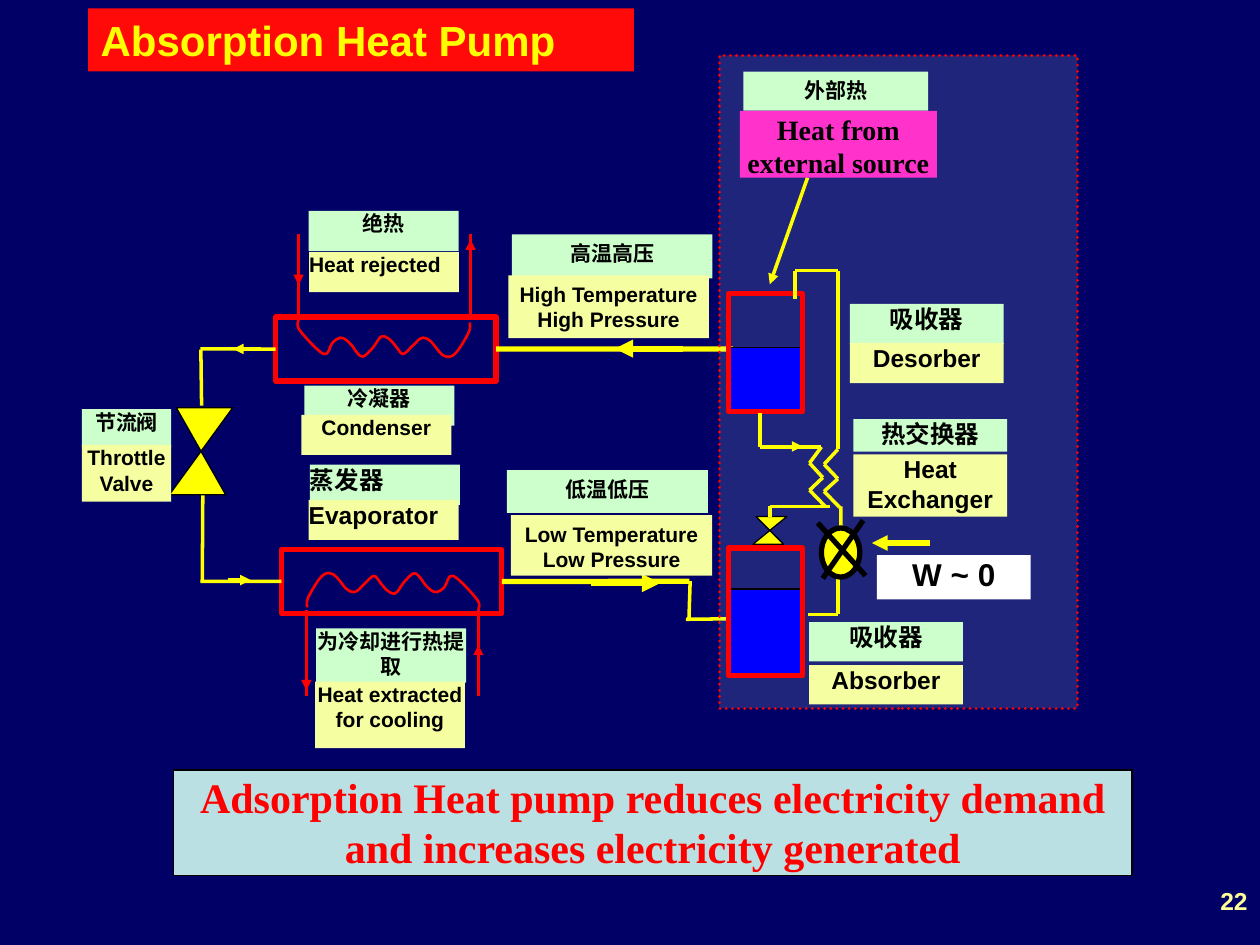
from dataclasses import dataclass
from itertools import pairwise

from lxml.etree import SubElement
from pptx import Presentation
from pptx.dml.color import RGBColor
from pptx.enum.dml import MSO_LINE
from pptx.enum.shapes import MSO_CONNECTOR, MSO_SHAPE
from pptx.enum.text import MSO_ANCHOR, PP_ALIGN
from pptx.oxml.ns import qn
from pptx.util import Pt


@dataclass(frozen=True)
class Theme:
    night: str = "000066"
    yellow: str = "FFFF00"
    red: str = "FF0000"
    title_red: str = "FF0909"
    ice: str = "BBE0E3"
    mint: str = "CCFFCC"
    cream: str = "F5FEA0"
    pink: str = "FF33CC"
    liquid: str = "0000FF"
    black: str = "000000"
    white: str = "FFFFFF"
    number: str = "FFFF99"
    sans: str = "Arial"
    serif: str = "Times New Roman"
    headline: int = 24
    work: int = 18
    source: int = 16
    large: int = 14
    small: int = 12


THEME = Theme()
LEFT_SIDE, RIGHT_SIDE = 1, 3
COIL = [(0, 0), (0.7, 5.8), (14.4, 19.4), (19.4, 13), (23.8, 10.1), (27.4, 11.5), (31, 15.1),
        (32.4, 17.3), (36.7, 20.9), (42.5, 15.8), (47.5, 9.4), (52.6, 11.5), (56.2, 15.8),
        (59.8, 19.4), (64.8, 15.1), (67, 13), (68.4, 11.5), (71.3, 10.1), (75.6, 12.2),
        (82.8, 20.2), (89.3, 19.4), (97.2, 7.2), (97.9, 1.4)]


def rgb(color):
    return RGBColor.from_string(color)


def paint(shape, fill=None, line=None, width=0.75):
    shape.shadow.inherit = False
    if fill:
        shape.fill.solid()
        shape.fill.fore_color.rgb = rgb(fill)
    else:
        shape.fill.background()
    if line:
        shape.line.color.rgb = rgb(line)
        shape.line.width = Pt(width)
    else:
        shape.line.fill.background()
    return shape


def add_box(page, at, fill=None, line=None, width=0.75, kind=MSO_SHAPE.RECTANGLE):
    return paint(page.shapes.add_shape(kind, *map(Pt, at)), fill, line, width)


def write(box, text, size, color=THEME.black, font=THEME.sans, align=PP_ALIGN.CENTER, inset=(0, 0)):
    frame = box.text_frame
    frame.word_wrap = True
    frame.vertical_anchor = MSO_ANCHOR.TOP
    frame.margin_left = frame.margin_right = Pt(inset[0])
    frame.margin_top = frame.margin_bottom = Pt(inset[1])
    for index, line in enumerate(text.split("\n")):
        para = frame.add_paragraph() if index else frame.paragraphs[0]
        para.alignment = align
        span = para.add_run()
        span.text = line
        span.font.name, span.font.size, span.font.bold = font, Pt(size), True
        span.font.color.rgb = rgb(color)


def add_label(page, text, at, fill, size=THEME.small, **style):
    write(add_box(page, at, fill), text, size, **style)


def add_line(page, start, end, color=THEME.yellow, width=2, arrow=False):
    line = page.shapes.add_connector(MSO_CONNECTOR.STRAIGHT, *map(Pt, (*start, *end)))
    line.line.color.rgb = rgb(color)
    line.line.width = Pt(width)
    properties = line._element.spPr
    SubElement(properties, qn("a:effectLst"))
    if arrow:
        SubElement(properties.find(qn("a:ln")), qn("a:tailEnd"), type="triangle")
    return line


def add_pipe(page, *points):
    for start, end in pairwise(points):
        add_line(page, start, end)


def add_outline(page, points, closed, **style):
    builder = page.shapes.build_freeform(Pt(points[0][0]), Pt(points[0][1]))
    builder.add_line_segments([(Pt(x), Pt(y)) for x, y in points[1:]], close=closed)
    return paint(builder.convert_to_shape(), **style)


def add_valve(page, apex, left, right, height):
    """Two triangles that meet at the apex, the lower one turned half round."""
    x, y = apex
    for sign in (1, -1):
        corners = [apex, (x - sign * left, y - sign * height), (x + sign * right, y - sign * height)]
        add_outline(page, corners, True, fill=THEME.yellow, line=THEME.black)


def bend(shape):
    """Turn the straight segments of an open outline into Bezier curves through its knots."""
    segments = list(shape._element.spPr.iter(qn("a:moveTo"), qn("a:lnTo")))
    knots = [(int(seg[0].get("x")), int(seg[0].get("y"))) for seg in segments]
    padded = [knots[0], *knots, knots[-1]]
    for segment, a, b, c, d in zip(segments[1:], padded, padded[1:], padded[2:], padded[3:]):
        segment.tag = qn("a:cubicBezTo")
        for origin, before, after, sign, place in ((b, a, c, 1, 0), (c, b, d, -1, 1)):
            x, y = (round(o + sign * (q - p) / 6) for o, p, q in zip(origin, before, after))
            control = SubElement(segment, qn("a:pt"), x=str(x), y=str(y))
            segment.insert(place, control)


def add_coil(page, start, sign):
    """Coil with its two open legs; sign -1 turns all of it half round."""
    def place(x, y):
        return start[0] + sign * x, start[1] + sign * y

    bend(add_outline(page, [place(x, y) for x, y in COIL], False, line=THEME.red, width=1.5))
    for x, tip, tail in ((0, -20, -44), (98.3, -46, -21.5)):
        add_line(page, place(x, 0), place(x, -49), THEME.red, 1.5)
        add_line(page, place(x, tail), place(x, tip), THEME.red, 0.75, arrow=True)


def add_throttle_and_coils(page):
    condenser = add_box(page, (157.5, 181.1, 126, 36.7), line=THEME.red, width=3)
    evaporator = add_box(page, (160.8, 313.9, 126, 36.7), line=THEME.red, width=3)
    # Throttle pipes
    add_pipe(page, (115.2, 231.8), (114.8, 199.8))
    add_line(page, (114.5, 199.4), (157.5, 199.4)).end_connect(condenser, LEFT_SIDE)
    add_line(page, (146.2, 199.4), (133.2, 199.4), arrow=True)
    add_pipe(page, (115.9, 283), (115.6, 332.2))
    add_line(page, (114.5, 332.2), (160.8, 332.2)).end_connect(evaporator, LEFT_SIDE)
    add_line(page, (130.3, 331.5), (143.3, 331.5), arrow=True)
    add_valve(page, (114.9, 257.9), 14.1, 18.1, 24.9)
    # Coils
    add_coil(page, (170.6, 182.9), 1)
    add_coil(page, (273.4, 348.5), -1)
    # Labels
    left = PP_ALIGN.LEFT
    add_label(page, "节流阀", (46.8, 233.8, 51, 21.6), THEME.mint)
    add_label(page, "Throttle Valve", (46.8, 254.2, 51, 32.4), THEME.cream)
    add_label(page, "冷凝器", (174, 220.3, 85.7, 23), THEME.mint)
    add_label(page, "绝热", (176.4, 120.5, 85.7, 23), THEME.mint)
    add_label(page, "Condenser", (172.2, 237, 85.7, 23), THEME.cream)
    add_label(page, "Heat rejected", (176.6, 144, 85.7, 23), THEME.cream, align=left)
    add_label(page, "蒸发器", (177.1, 265.5, 85.7, 23), THEME.mint, THEME.large, align=left)
    add_label(page, "为冷却进行热提取", (180.7, 359.1, 85.7, 31), THEME.mint)
    add_label(page, "Evaporator", (176.4, 285.6, 85.7, 23), THEME.cream, THEME.large, align=left)
    add_label(page, "Heat extracted for cooling", (180, 389.5, 85.7, 38), THEME.cream)
    return condenser, evaporator


def add_pressure_pipes(page, condenser, evaporator):
    inset = (0, 3.6)
    # High pressure
    add_line(page, (419, 199.4), (283.5, 199.4), width=3).end_connect(condenser, RIGHT_SIDE)
    add_line(page, (390.2, 199.2), (351.4, 199.2), width=3.5, arrow=True)
    add_label(page, "高温高压", (292.5, 133.9, 114.7, 25.2), THEME.mint, inset=inset)
    add_label(page, "High Temperature\nHigh Pressure", (290.5, 157.4, 114.7, 35.8), THEME.cream, inset=inset)
    # Low pressure
    add_line(page, (394, 332.2), (286.8, 332.2), width=3).end_connect(evaporator, RIGHT_SIDE)
    add_line(page, (337.7, 333.2), (377.3, 333.2), width=3.5, arrow=True)
    add_pipe(page, (394.4, 332), (393.7, 353.9))
    add_pipe(page, (391.9, 353.9), (417.6, 353.6))
    add_label(page, "低温低压", (289.6, 268.6, 115, 24.5), THEME.mint, inset=inset)
    add_label(page, "Low Temperature\nLow Pressure", (292, 294.4, 115, 34.6), THEME.cream, inset=inset)


def add_sorption_side(page):
    panel = add_box(page, (411.1, 31.7, 204.6, 373), THEME.ice, THEME.red, 1.75)
    panel.line.dash_style = MSO_LINE.ROUND_DOT
    panel._element.spPr.find(qn("a:ln")).set("cap", "rnd")
    tint = panel._element.spPr.find(qn("a:solidFill"))[0]
    SubElement(tint, qn("a:alpha"), val="17000")
    # Heat and work supplied
    add_label(page, "外部热", (424.8, 41, 105.6, 22.3), THEME.mint, inset=(0, 3.6))
    add_line(page, (461.5, 101.5), (439.9, 162.5), arrow=True)
    add_label(page, "Heat from external source", (422.8, 63.4, 112.6, 38.2), THEME.pink,
              THEME.source, font=THEME.serif, inset=(0, 0.7))
    add_line(page, (531.4, 310.3), (498.2, 310.3), width=3, arrow=True)
    add_label(page, "W ~ 0", (501.1, 317.2, 87.8, 25.4), THEME.white, THEME.work)
    # Vessels
    add_valve(page, (439.9, 303.1), 7.9, 9.7, 7.9)
    add_box(page, (416.4, 198.5, 42.5, 36.7), THEME.liquid, THEME.black)
    add_box(page, (415.8, 336.6, 42.5, 48.2), THEME.liquid, THEME.black)
    for top, height in ((313.2, 73), (167.8, 67.4)):
        add_box(page, (416.2, top, 42.5, height), line=THEME.red, width=3)
    # Solution circuit
    add_pipe(page, (434.2, 236.2), (434.2, 255.4), (469.4, 255.4), (462.6, 264.6),
             (470.2, 272.9), (462.6, 280.1), (471.6, 289.4))
    add_pipe(page, (474.5, 289.4), (439.9, 289.4), (439.9, 295.2))
    add_pipe(page, (454.3, 170.6), (454.3, 154.6), (478.8, 154.6), (478.8, 254.2))
    add_pipe(page, (478.8, 250.6), (478.8, 256.8), (470.9, 265.3), (478.8, 273.6),
             (470.9, 280.8), (479.9, 290))
    add_pipe(page, (480.5, 289.4), (480.6, 303.8))
    add_pipe(page, (461.5, 351.2), (478.8, 351.2))
    add_pipe(page, (479, 350.6), (479, 329.8))
    add_line(page, (445.7, 255.1), (458.6, 255.1), arrow=True)
    # Pump
    add_box(page, (469.4, 301.7, 21.9, 28.1), THEME.yellow, THEME.black, 3, MSO_SHAPE.OVAL)
    add_line(page, (467.3, 298.8), (494.6, 329), THEME.black, 3)
    add_line(page, (470.2, 330.5), (493.2, 297.4), THEME.black, 3)
    # Labels
    for chinese, english, left, top, gap, heights in (
            ("吸收器", "Absorber", 462.4, 355.5, 24.6, (22.5, 22.5)),
            ("吸收器", "Desorber", 485.7, 173.6, 22.4, (23, 23)),
            ("热交换器", "Heat Exchanger", 487.7, 239.5, 20.2, (18.6, 35.5))):
        add_label(page, chinese, (left, top, 87.8, heights[0]), THEME.mint, THEME.large)
        add_label(page, english, (left, top + gap, 87.8, heights[1]), THEME.cream, THEME.large)


def main():
    deck = Presentation()
    deck.slide_width, deck.slide_height = Pt(720), Pt(540)
    page = deck.slides.add_slide(deck.slide_layouts[6])
    page.background.fill.solid()
    page.background.fill.fore_color.rgb = rgb(THEME.night)
    # Title and message
    add_label(page, "Absorption Heat Pump", (50.4, 4.8, 311.8, 36), THEME.title_red, THEME.headline,
              color=THEME.yellow, align=PP_ALIGN.LEFT, inset=(7.2, 3.6))
    message = add_box(page, (99.1, 440, 547.9, 60.3), THEME.ice, THEME.black, 1)
    write(message, "Adsorption Heat pump reduces electricity demand and increases electricity generated",
          THEME.headline, THEME.red, THEME.serif, inset=(7.2, 0.7))
    # Heat pump diagram
    add_pressure_pipes(page, *add_throttle_and_coils(page))
    add_sorption_side(page)
    # Page number
    number = page.shapes.add_textbox(*map(Pt, (552.2, 502.6, 167.8, 37.4)))
    write(number, "22", THEME.large, THEME.number, align=PP_ALIGN.RIGHT, inset=(7.2, 3.6))
    deck.save("out.pptx")


if __name__ == "__main__":
    main()
